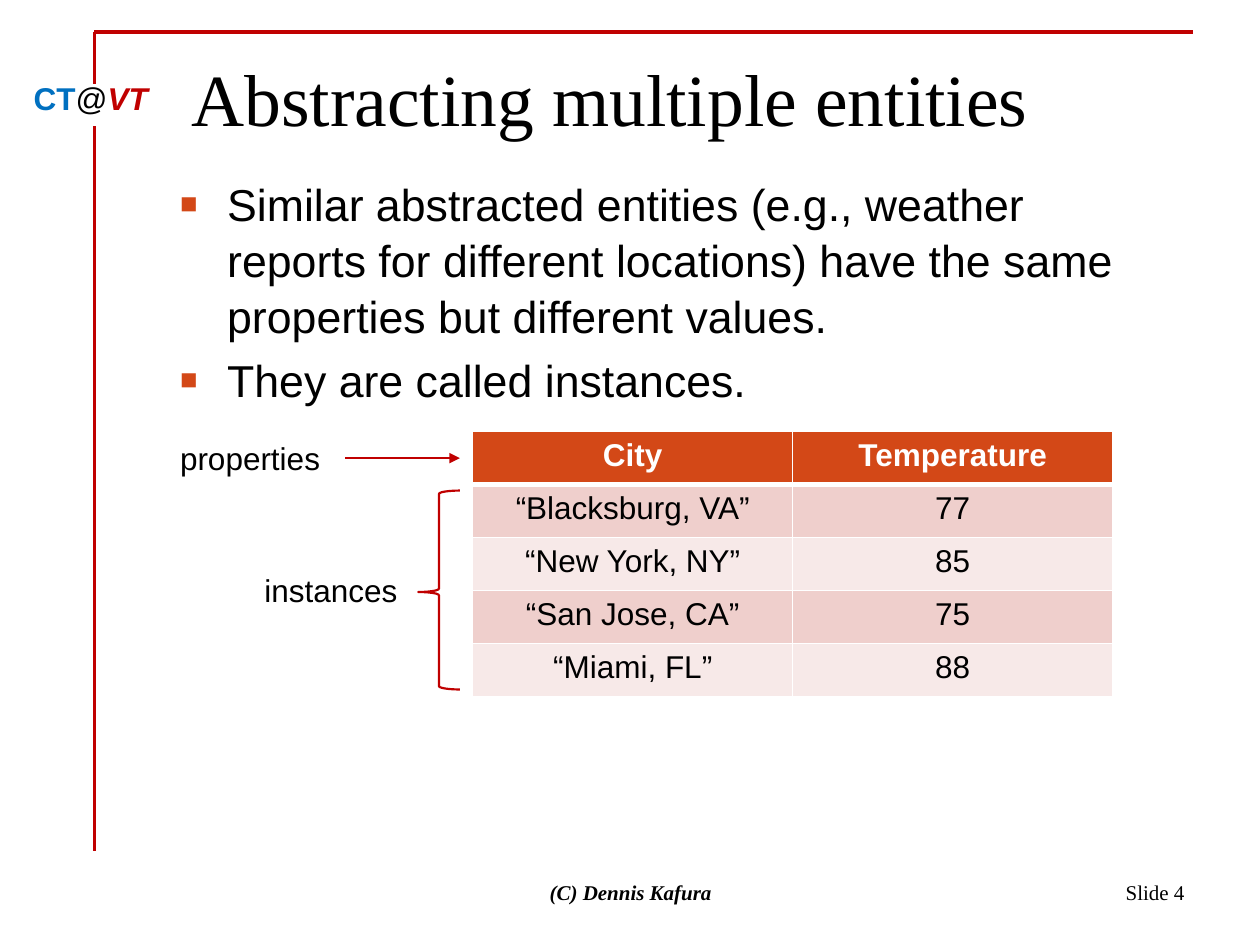
from dataclasses import dataclass

from lxml import etree
from pptx import Presentation
from pptx.dml.color import RGBColor
from pptx.enum.shapes import MSO_CONNECTOR, MSO_SHAPE
from pptx.enum.text import MSO_ANCHOR as ANCHOR, PP_ALIGN as ALIGN
from pptx.oxml.ns import qn
from pptx.util import Cm, Pt


@dataclass(frozen=True)
class Theme:
    sans: str = "Arial"
    serif: str = "Times New Roman"
    black: str = "000000"
    white: str = "FFFFFF"
    red: str = "C00000"
    blue: str = "0070C0"
    orange: str = "D34817"
    bands: tuple = ("EFCFCC", "F7E9E8")
    title: float = 42
    body: float = 25.5
    label: float = 18
    footer: float = 12


@dataclass(frozen=True)
class Box:
    """A region in centimetres."""
    x: float
    y: float
    w: float
    h: float

    def inner(self, dx, dy, w, h):
        return Box(self.x + dx, self.y + dy, w, h)

    def emu(self):
        return Cm(self.x), Cm(self.y), Cm(self.w), Cm(self.h)


T = Theme()
WEATHER = [("City", "Temperature"), ("“Blacksburg, VA”", "77"),
           ("“New York, NY”", "85"), ("“San Jose, CA”", "75"),
           ("“Miami, FL”", "88")]


def rgb(value):
    return RGBColor.from_string(value)


def add_run(p, text, size, font=T.sans, color=T.black, bold=False, italic=False):
    r = p.add_run()
    r.text = text
    f = r.font
    f.size, f.name, f.bold, f.italic = Pt(size), font, bold, italic
    f.color.rgb = rgb(color)


def add_text_frame(s, box, wrap=True, anchor=ANCHOR.TOP):
    tf = s.shapes.add_textbox(*box.emu()).text_frame
    tf.word_wrap, tf.vertical_anchor = wrap, anchor
    return tf


def add_line(s, x1, y1, x2, y2, width, arrow=False):
    line = s.shapes.add_connector(MSO_CONNECTOR.STRAIGHT,
                                  Cm(x1), Cm(y1), Cm(x2), Cm(y2))
    line.line.color.rgb = rgb(T.red)
    line.line.width = Pt(width)
    if arrow:
        etree.SubElement(line.line._get_or_add_ln(), qn("a:tailEnd"), type="triangle")
    etree.SubElement(line._element.spPr, qn("a:effectLst"))


def add_frame(s, box):
    """Red rules along the top and left, with the course tag in the gap."""
    gap_top, gap_bottom = box.y + 1.06, box.y + 1.9
    add_line(s, box.x, box.y, box.x + box.w, box.y, 2)
    add_line(s, box.x, box.y, box.x, gap_top, 1.75)
    add_line(s, box.x, gap_bottom, box.x, box.y + box.h, 1.75)
    p = add_text_frame(s, box.inner(-1.47, 0.83, 2.84, 1.02), wrap=False).paragraphs[0]
    add_run(p, "CT", T.label, color=T.blue, bold=True)
    add_run(p, "@", T.label)
    add_run(p, "VT", T.label, color=T.red, bold=True, italic=True)


def add_title(s, box, text):
    tf = add_text_frame(s, box)
    tf.margin_top = Cm(0.3)
    add_run(tf.paragraphs[0], text, T.title, T.serif)


def add_bullets(s, box, items):
    tf = add_text_frame(s, box)
    for i, item in enumerate(items):
        p = tf.add_paragraph() if i else tf.paragraphs[0]
        pPr = p._p.get_or_add_pPr()
        pPr.set("marL", str(Cm(0.95)))
        pPr.set("indent", str(-Cm(0.95)))
        color = etree.SubElement(pPr, qn("a:buClr"))
        etree.SubElement(color, qn("a:srgbClr"), val=T.orange)
        etree.SubElement(pPr, qn("a:buSzPct"), val="65000")
        etree.SubElement(pPr, qn("a:buFont"), typeface=T.sans)
        etree.SubElement(pPr, qn("a:buChar"), char="■")
        p.line_spacing = 1.04
        if i:
            p.space_before = Pt(5)
        add_run(p, item, T.body)


def set_borders(cell, bottom):
    tcPr = cell._tc.get_or_add_tcPr()
    for i, (side, width) in enumerate(
            [("lnL", 1), ("lnR", 1), ("lnT", 1), ("lnB", bottom)]):
        ln = etree.Element(qn(f"a:{side}"), w=str(Pt(width)))
        fill = etree.SubElement(ln, qn("a:solidFill"))
        etree.SubElement(fill, qn("a:srgbClr"), val=T.white)
        tcPr.insert(i, ln)


def add_weather_table(s, box, rows):
    table = s.shapes.add_table(len(rows), len(rows[0]), *box.emu()).table
    for i, row in enumerate(rows):
        header = i == 0
        for j, text in enumerate(row):
            cell = table.cell(i, j)
            cell.fill.solid()
            cell.fill.fore_color.rgb = rgb(T.orange if header else T.bands[(i - 1) % 2])
            set_borders(cell, 3 if header else 1)
            p = cell.text_frame.paragraphs[0]
            p.alignment = ALIGN.CENTER
            add_run(p, text, T.label, color=T.white if header else T.black, bold=header)


def add_label(s, box, text):
    tf = add_text_frame(s, box, wrap=False)
    add_run(tf.paragraphs[0], text, T.label)


def add_instances_diagram(s, box):
    """The table at the right, its header and data rows named at the left."""
    row_h = box.h / len(WEATHER)
    label_h = 1.02
    add_label(s, box.inner(0, (row_h - label_h) / 2, 3.35, label_h), "properties")
    arrow_y = box.y + row_h / 2
    add_line(s, box.x + 3.58, arrow_y, box.x + 5.89, arrow_y, 1.25, arrow=True)

    span = box.inner(5.05, row_h + 0.12, 0.84, 4.01)
    brace = s.shapes.add_shape(MSO_SHAPE.LEFT_BRACE, *span.emu())
    brace.shadow.inherit = False
    brace.fill.background()
    brace.line.color.rgb = rgb(T.red)
    brace.line.width = Pt(1.25)
    brace.adjustments[0], brace.adjustments[1] = 0.08, 0.51
    add_label(s, span.inner(-3.35, (span.h - label_h) / 2, 3.23, label_h), "instances")

    add_weather_table(s, box.inner(6.15, 0, box.w - 6.15, box.h), WEATHER)


def add_footer(s, box):
    p = add_text_frame(s, box.inner(0, 0, 8.05, box.h), anchor=ANCHOR.MIDDLE).paragraphs[0]
    p.alignment = ALIGN.CENTER
    add_run(p, "(C) Dennis Kafura", T.footer, T.serif, bold=True, italic=True)
    number = box.inner(box.w - 5.92, 0, 5.92, box.h)
    p = add_text_frame(s, number, anchor=ANCHOR.MIDDLE).paragraphs[0]
    p.alignment = ALIGN.RIGHT
    add_run(p, "Slide 4", T.footer, T.serif)


def main():
    prs = Presentation()
    prs.slide_width, prs.slide_height = Cm(25.4), Cm(19.05)
    s = prs.slides.add_slide(prs.slide_layouts[6])
    add_frame(s, Box(1.9, 0.64, 22.15, 16.51))
    add_title(s, Box(3.61, 0.76, 20.52, 1.98), "Abstracting multiple entities")
    add_bullets(s, Box(3.38, 3.4, 19.89, 4.42), [
        "Similar abstracted entities (e.g., weather reports for different "
        "locations) have the same properties but different values.",
        "They are called instances."])
    add_instances_diagram(s, Box(3.38, 8.7, 19.05, 5.35))
    add_footer(s, Box(8.69, 17.35, 15.44, 1.27))
    prs.save("out.pptx")


if __name__ == "__main__":
    main()
